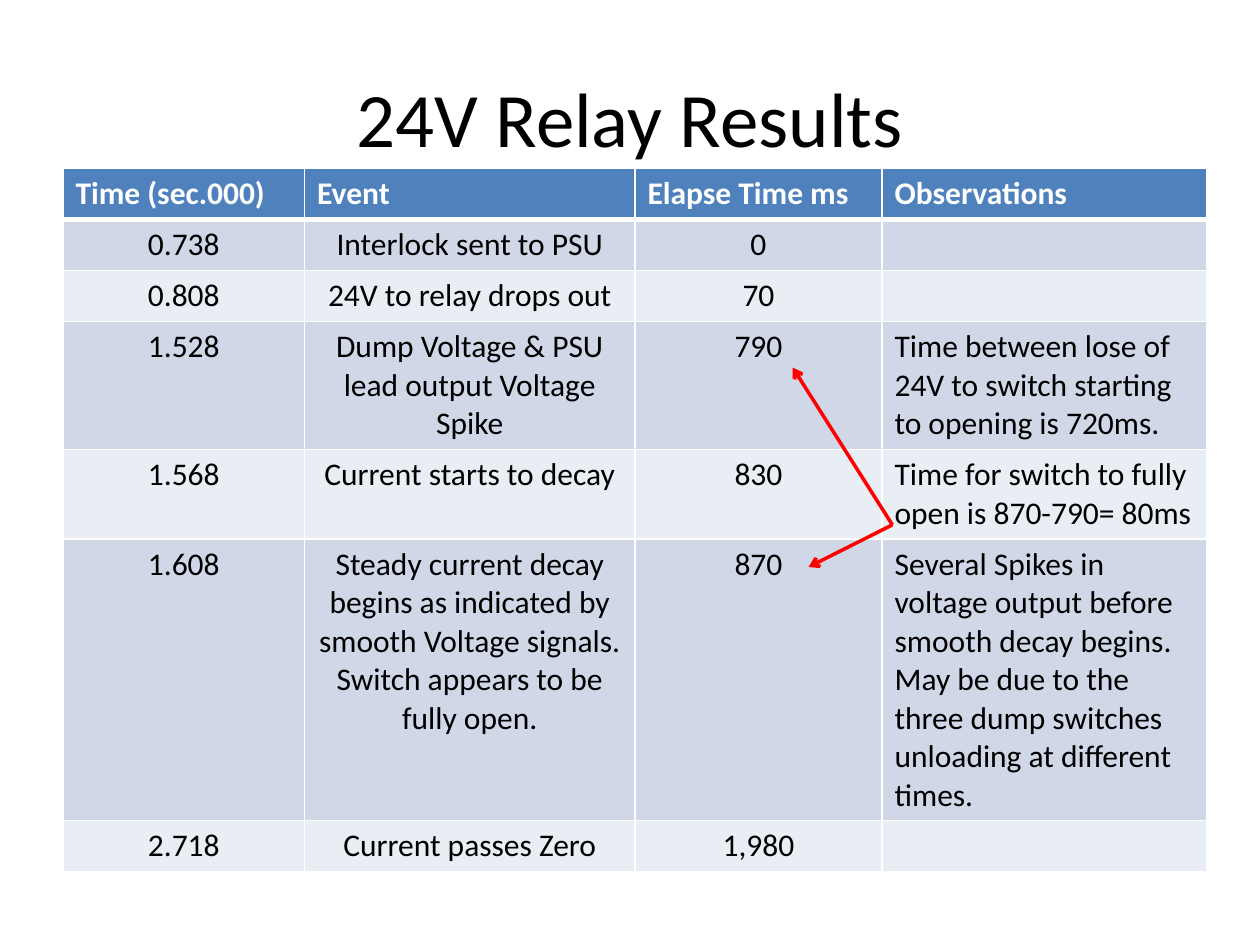
from dataclasses import dataclass

from lxml import etree
from pptx import Presentation
from pptx import util as u
from pptx.dml.color import RGBColor
from pptx.enum import shapes, text
from pptx.oxml import ns


@dataclass(frozen=True)
class Theme:
    font: str = "Calibri"
    title_size: int = 44
    table_size: int = 18
    ink: str = "000000"
    white: str = "FFFFFF"
    header: str = "4F81BD"
    bands: tuple = ("D0D8E8", "E9EDF4")
    arrow: str = "FF0000"


THEME = Theme()

COLUMN_WIDTHS = (4.87, 6.66, 4.98, 6.55)
HEADINGS = ("Time (sec.000)", "Event", "Elapse Time ms", "Observations")
# Row height in cm, then the cell texts; a line break starts a new paragraph
EVENTS = (
    (1.03, "0.738", "Interlock sent to PSU", "0", ""),
    (1.03, "0.808", "24V to relay drops out", "70", ""),
    (2.58, "1.528", "Dump Voltage & PSU lead output Voltage Spike", "790",
     "Time between lose of 24V to switch starting to opening is 720ms."),
    (1.81, "1.568", "Current starts to decay", "830",
     "Time for switch to fully open is 870-790= 80ms"),
    (5.67, "1.608",
     "Steady current decay begins as indicated by smooth Voltage signals.\n"
     "Switch appears to be fully open.", "870",
     "Several Spikes in voltage output before smooth decay begins.\n"
     "May be due to the three dump switches unloading at different times."),
    (1.03, "2.718", "Current passes Zero", "1,980", ""),
)
HEADER_HEIGHT = 1.03


def write_text(frame, content, align, color, size, bold=False):
    frame.text = content
    values = {"name": THEME.font, "size": u.Pt(size), "bold": bold}
    for paragraph in frame.paragraphs:
        paragraph.alignment = align
        for name, value in values.items():
            setattr(paragraph.font, name, value)
        paragraph.font.color.rgb = RGBColor.from_string(color)
        for run in paragraph.runs:
            for name, value in values.items():
                setattr(run.font, name, value)
            run.font.color.rgb = RGBColor.from_string(color)


def add_title(slide, content):
    shape = slide.shapes.add_textbox(u.Cm(1.27), u.Cm(0.76), u.Cm(22.86), u.Cm(3.18))
    frame = shape.text_frame
    frame.word_wrap = True
    frame.vertical_anchor = text.MSO_ANCHOR.MIDDLE
    write_text(frame, content, text.PP_ALIGN.CENTER, THEME.ink, THEME.title_size)


def set_borders(cell, top=1, bottom=1):
    properties = cell._tc.get_or_add_tcPr()
    for side, width in {"L": 1, "R": 1, "T": top, "B": bottom}.items():
        line = etree.SubElement(properties, ns.qn(f"a:ln{side}"), w=str(u.Pt(width)))
        fill = etree.SubElement(line, ns.qn("a:solidFill"))
        etree.SubElement(fill, ns.qn("a:srgbClr"), val=THEME.white)


def fill_cell(cell, color):
    cell.fill.solid()
    cell.fill.fore_color.rgb = RGBColor.from_string(color)


def add_results_table(slide):
    heights = [HEADER_HEIGHT] + [event[0] for event in EVENTS]
    table = slide.shapes.add_table(
        len(heights), len(HEADINGS), u.Cm(1.27), u.Cm(3.39),
        u.Cm(sum(COLUMN_WIDTHS)), u.Cm(sum(heights))).table
    for column, width in zip(table.columns, COLUMN_WIDTHS):
        column.width = u.Cm(width)
    for row, height in zip(table.rows, heights):
        row.height = u.Cm(height)

    # Header row with a heavier rule below
    for cell, heading in zip(table.rows[0].cells, HEADINGS):
        write_text(cell.text_frame, heading, text.PP_ALIGN.LEFT,
                   THEME.white, THEME.table_size, bold=True)
        set_borders(cell, bottom=3)
        fill_cell(cell, THEME.header)

    # Banded event rows: observations to the left, the rest centred
    for index, (_, *contents) in enumerate(EVENTS):
        for column, content in enumerate(contents):
            cell = table.cell(index + 1, column)
            is_observation = column == len(HEADINGS) - 1
            align = text.PP_ALIGN.LEFT if is_observation else text.PP_ALIGN.CENTER
            write_text(cell.text_frame, content, align, THEME.ink, THEME.table_size)
            set_borders(cell, top=3 if index == 0 else 1)
            fill_cell(cell, THEME.bands[index % 2])


def add_arrow(slide, start, end):
    points = [u.Cm(value) for value in (*start, *end)]
    connector = slide.shapes.add_connector(shapes.MSO_CONNECTOR.STRAIGHT, *points)
    connector.line.width = u.Pt(2)
    connector.line.color.rgb = RGBColor.from_string(THEME.arrow)
    etree.SubElement(connector.line._get_or_add_ln(), ns.qn("a:tailEnd"), type="arrow")
    etree.SubElement(connector._element.spPr, ns.qn("a:effectLst"))


def main():
    presentation = Presentation()
    presentation.slide_width = u.Cm(25.4)
    presentation.slide_height = u.Cm(19.05)
    slide = presentation.slides.add_slide(presentation.slide_layouts[6])

    add_title(slide, "24V Relay Results")
    add_results_table(slide)

    # Arrows from the switch time to the two readings it compares
    switch_time = (17.99, 10.58)
    for reading in ((16.3, 11.43), (15.98, 7.41)):
        add_arrow(slide, switch_time, reading)

    presentation.save("out.pptx")


if __name__ == "__main__":
    main()
